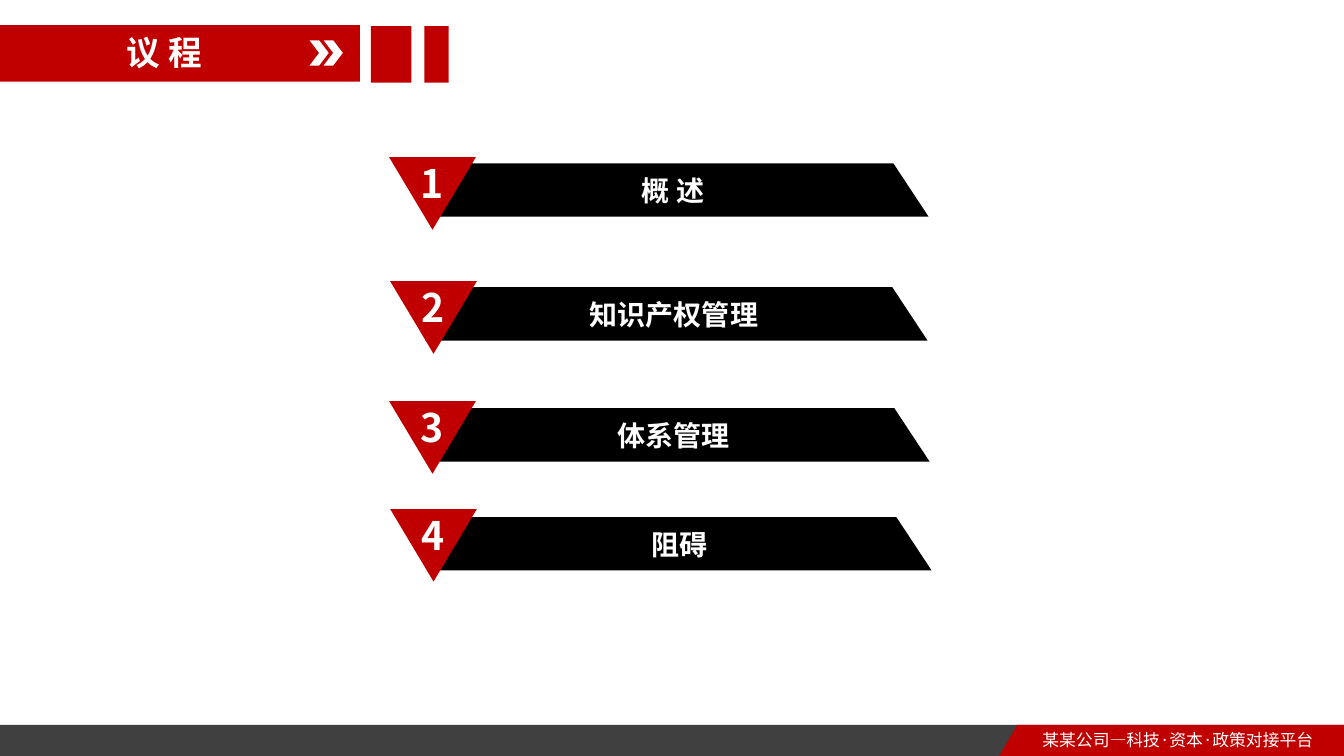
from dataclasses import dataclass

from lxml import etree
from pptx import Presentation
from pptx.dml.color import RGBColor
from pptx.enum.shapes import MSO_SHAPE
from pptx.enum.text import MSO_ANCHOR, MSO_AUTO_SIZE, PP_ALIGN
from pptx.oxml.ns import qn
from pptx.util import Inches, Pt

RECTANGLE = MSO_SHAPE.RECTANGLE
CHEVRON = MSO_SHAPE.CHEVRON
TRIANGLE = MSO_SHAPE.ISOSCELES_TRIANGLE
LEFT, CENTER = PP_ALIGN.LEFT, PP_ALIGN.CENTER
TOP = MSO_ANCHOR.TOP
GROW = MSO_AUTO_SIZE.SHAPE_TO_FIT_TEXT
TITLE_ONLY = 5


@dataclass(frozen=True)
class Theme:
    red: RGBColor = RGBColor(0xC0, 0x00, 0x00)
    black: RGBColor = RGBColor(0x00, 0x00, 0x00)
    gray: RGBColor = RGBColor(0x40, 0x40, 0x40)
    white: RGBColor = RGBColor(0xFF, 0xFF, 0xFF)
    font: str = "Noto Sans CJK SC"
    footer_font: str = "Noto Sans CJK JP"
    number_size: int = 28
    title_size: int = 24
    label_size: int = 20
    footer_size: int = 12


THEME = Theme()

# label, bar left and top, label left, marker left and top
AGENDA = [
    ("概 述", 4.23, 1.62, 5.11, 3.86, 1.56),
    ("知识产权管理", 4.22, 2.85, 5.12, 3.87, 2.79),
    ("体系管理", 4.24, 4.05, 5.12, 3.86, 3.98),
    ("阻碍", 4.26, 5.13, 5.18, 3.87, 5.05),
]


def paint(shape, color):
    shape.shadow.inherit = False
    shape.fill.solid()
    shape.fill.fore_color.rgb = color
    shape.line.fill.background()


def add_preset(slide, kind, at, color):
    shape = slide.shapes.add_shape(kind, *map(Inches, at))
    paint(shape, color)
    return shape


def add_outline(slide, points, color):
    start, *rest = [(Inches(x), Inches(y)) for x, y in points]
    builder = slide.shapes.build_freeform(*start)
    builder.add_line_segments(rest, close=True)
    paint(builder.convert_to_shape(), color)


def write(box, text, size, align=LEFT, bold=True, font=THEME.font, wrap=True):
    """Put one formatted line of white text in a box or placeholder."""
    frame = box.text_frame
    frame_format = {"word_wrap": wrap, "auto_size": GROW, "vertical_anchor": TOP}
    for name, value in frame_format.items():
        setattr(frame, name, value)
    para = frame.paragraphs[0]
    para.alignment = align
    span = para.add_run()
    span.text = text
    span.font.color.rgb = THEME.white
    for name, value in {"name": font, "size": Pt(size), "bold": bold}.items():
        setattr(span.font, name, value)
    east_asian = etree.SubElement(span.font._element, qn("a:ea"))
    east_asian.set("typeface", font)


def add_text(slide, at, text, size, **text_format):
    box = slide.shapes.add_textbox(*map(Inches, at))
    write(box, text, size, **text_format)


def add_header(slide):
    for at in [(0, 0.25, 3.57, 0.56), (3.68, 0.26, 0.4, 0.56), (4.21, 0.26, 0.24, 0.56)]:
        add_preset(slide, RECTANGLE, at, THEME.red)
    for left in (3.07, 3.21):
        add_preset(slide, CHEVRON, (left, 0.4, 0.19, 0.25), THEME.white)
    title = slide.shapes.title
    position = {"left": 0.52, "top": 0.27, "width": 2.22, "height": 0.5}
    for name, value in position.items():
        setattr(title, name, Inches(value))
    write(title, "议 程", THEME.title_size, align=CENTER)
    # Bring the title in front of the banner
    slide.shapes._spTree.append(title._element)


def add_footer(slide):
    add_preset(slide, RECTANGLE, (0, 7.19, 13.33, 0.31), THEME.gray)
    tab = [(10.09, 7.19), (13.33, 7.19), (13.33, 7.5), (9.91, 7.5)]
    add_outline(slide, tab, THEME.red)
    add_text(slide, (10.24, 7.19, 3.08, 0.3), "某某公司—科技·资本·政策对接平台",
             THEME.footer_size, bold=False, font=THEME.footer_font)


def add_agenda_item(slide, number, label, left, top, label_left, marker_left, marker_top):
    right, bottom = left + 4.98, top + 0.53
    bar = [(left, top), (right - 0.35, top), (right, bottom), (left, bottom)]
    add_outline(slide, bar, THEME.black)
    add_text(slide, (label_left, top + 0.05, 3.13, 0.44), label,
             THEME.label_size, align=CENTER)
    marker = add_preset(slide, TRIANGLE, (marker_left, marker_top, 0.86, 0.72), THEME.red)
    marker._element.spPr.xfrm.set("flipV", "1")
    add_text(slide, (marker_left + 0.21, marker_top - 0.03, 0.45, 0.57), str(number),
             THEME.number_size, wrap=False)


def main():
    deck = Presentation()
    deck.slide_width, deck.slide_height = Inches(13.33), Inches(7.5)
    slide = deck.slides.add_slide(deck.slide_layouts[TITLE_ONLY])
    add_header(slide)
    add_footer(slide)
    for number, item in enumerate(AGENDA, start=1):
        add_agenda_item(slide, number, *item)
    deck.save("out.pptx")


if __name__ == "__main__":
    main()
